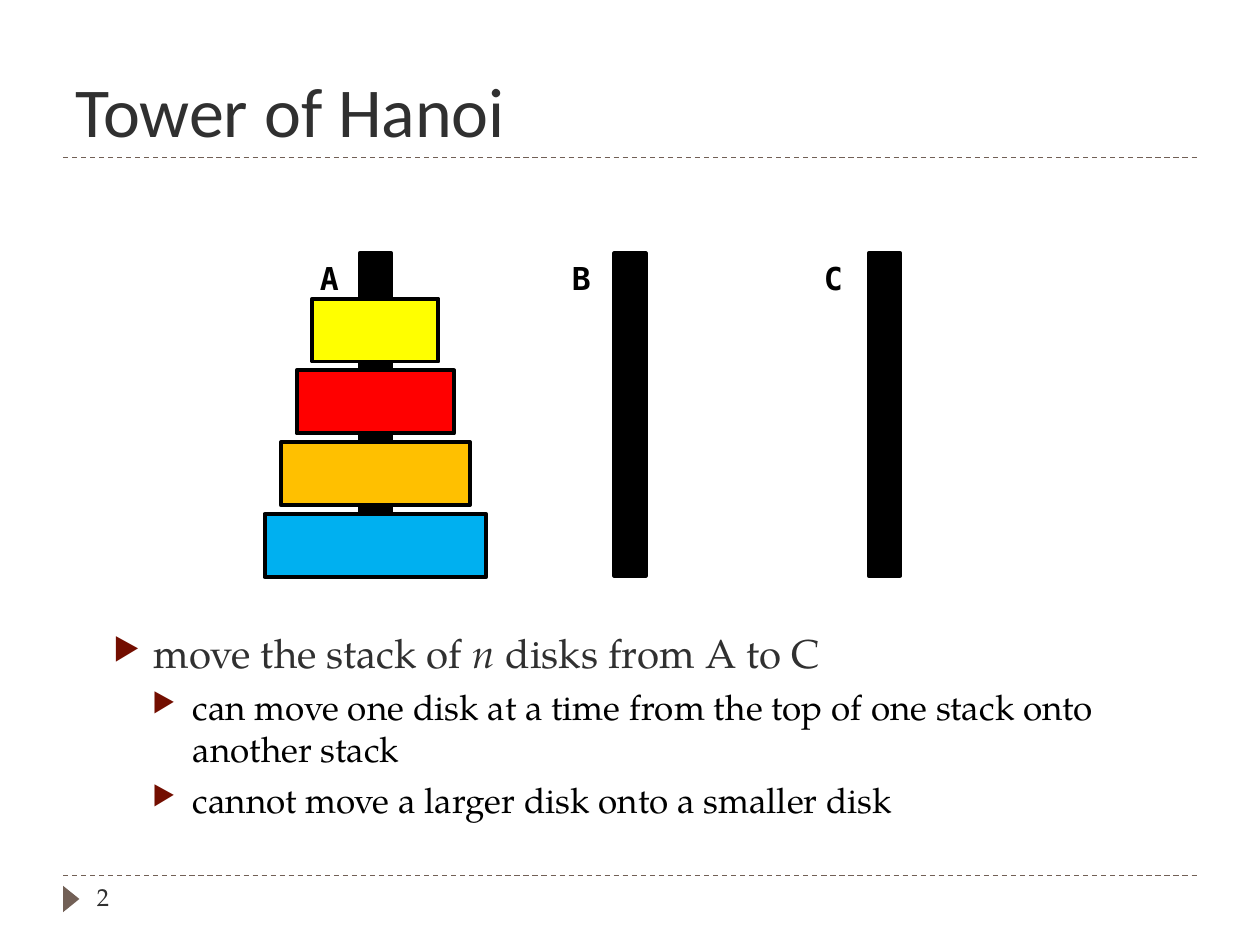
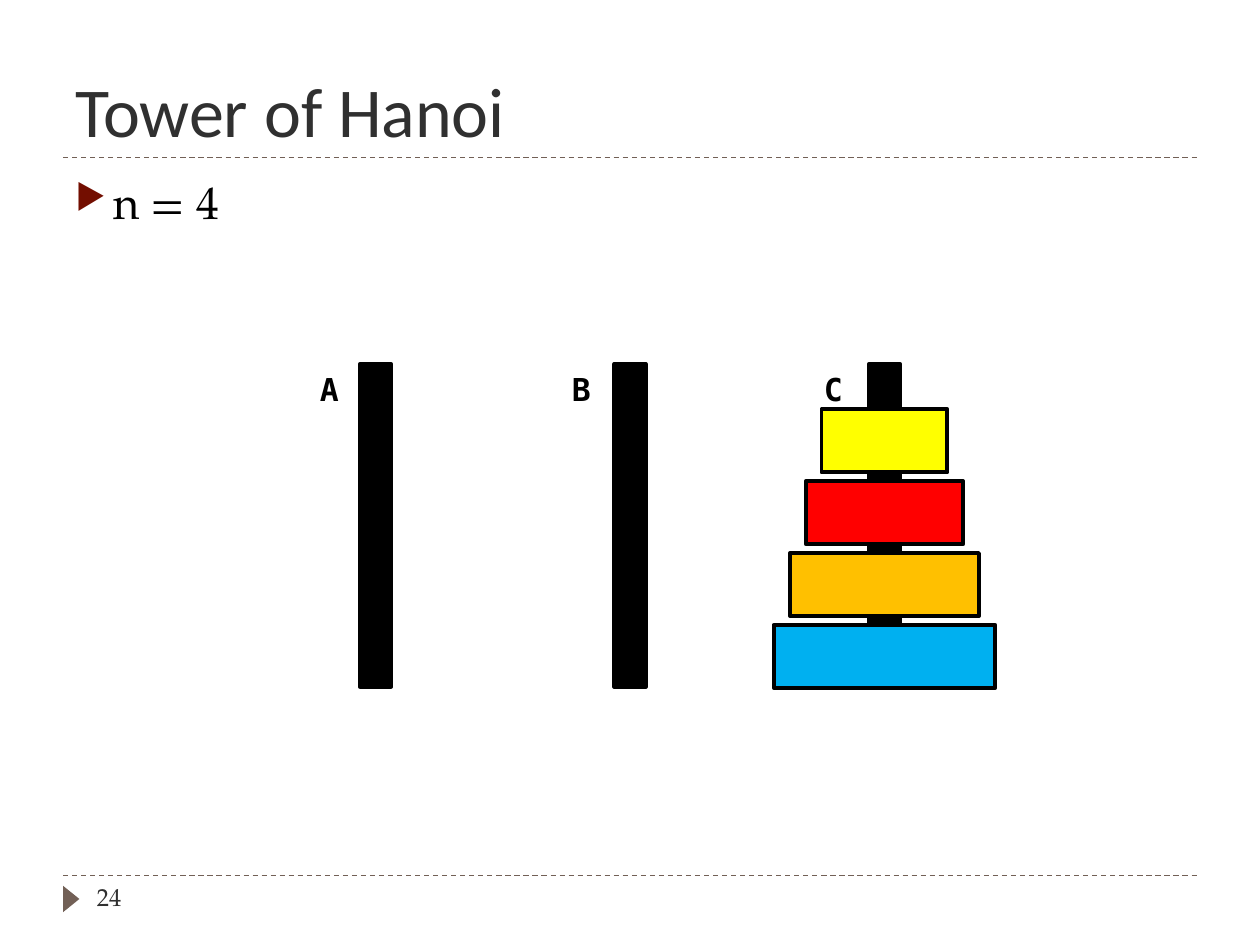
from lxml import etree
from pptx import Presentation
from pptx import util as u
from pptx.dml.color import RGBColor
from pptx.enum import dml, shapes, text
from pptx.oxml import ns

INK = RGBColor(0x30, 0x30, 0x30)
BLACK = RGBColor(0, 0, 0)
TAUPE = RGBColor(0x72, 0x60, 0x56)
MAROON = RGBColor(0x73, 0x0E, 0x00)
YELLOW = RGBColor(0xFF, 0xFF, 0x00)
RED = RGBColor(0xFF, 0, 0)
ORANGE = RGBColor(0xFF, 0xC0, 0)
BLUE = RGBColor(0, 0xB0, 0xF0)

TITLE_FONT = "Calibri"
BODY_FONT = "TeX Gyre Pagella"
LABEL_FONT = "DejaVu Sans Mono"

PEGS = "ABC"
PEG_PITCH = 2.02
PEG_WIDTH, PEG_HEIGHT = 0.25, 2.56
LABEL_LEFT, LABEL_PITCH = 2.44, 2
DISKS = [(1, YELLOW), (1.25, RED), (1.5, ORANGE), (1.76, BLUE)]
DISK_HEIGHT, DISK_PITCH, DISK_OFFSET = 0.5, 0.57, 0.36


def box(left, top, width, height):
    return [u.Inches(value) for value in (left, top, width, height)]


def format_run(run, font, size, color, bold=False, italic=False):
    run.font.name = font
    run.font.size = u.Pt(size)
    run.font.color.rgb = color
    run.font.bold = bold
    run.font.italic = italic


def add_text(slide, place, content, font, size, color, bold=False):
    shape = slide.shapes.add_textbox(*box(*place))
    frame = shape.text_frame
    frame.word_wrap = True
    frame.text = content
    format_run(frame.paragraphs[0].runs[0], font, size, color, bold)
    return frame


def add_shape(slide, kind, place, fill, outlined=False):
    shape = slide.shapes.add_shape(kind, *box(*place))
    shape.shadow.inherit = False
    shape.fill.solid()
    shape.fill.fore_color.rgb = fill
    if outlined:
        shape.line.color.rgb = BLACK
        shape.line.width = u.Pt(2.25)
    else:
        shape.line.fill.background()
    return shape


def add_rule(slide, y):
    rule = slide.shapes.add_connector(
        shapes.MSO_CONNECTOR.STRAIGHT,
        u.Inches(0.5), u.Inches(y), u.Inches(9.5), u.Inches(y))
    rule.line.color.rgb = TAUPE
    rule.line.width = u.Pt(0.75)
    rule.line.dash_style = dml.MSO_LINE.DASH
    etree.SubElement(rule._element.spPr, ns.qn("a:effectLst"))


def set_bullet(paragraph, margin, hanging):
    properties = paragraph._p.get_or_add_pPr()
    properties.set("marL", str(u.Inches(margin)))
    properties.set("indent", str(-u.Inches(hanging)))
    color = etree.SubElement(properties, ns.qn("a:buClr"))
    etree.SubElement(color, ns.qn("a:srgbClr"), val=str(MAROON))
    etree.SubElement(properties, ns.qn("a:buSzPct"), val="76000")
    etree.SubElement(properties, ns.qn("a:buChar"), char="▶")


def add_bullets(slide, top, height, bullets):
    frame = slide.shapes.add_textbox(*box(0.5, top, 9, height)).text_frame
    frame.word_wrap = True
    for index, (parts, size, color, margin, hanging, space) in enumerate(bullets):
        paragraph = frame.paragraphs[0] if index == 0 else frame.add_paragraph()
        paragraph.space_before = u.Pt(space)
        set_bullet(paragraph, margin, hanging)
        for content, italic in parts:
            run = paragraph.add_run()
            run.text = content
            format_run(run, BODY_FONT, size, color, italic=italic)


def add_pegs(slide, top, stacked_peg):
    rectangle = shapes.MSO_SHAPE.RECTANGLE
    centers = {peg: 5 + PEG_PITCH * (index - 1) for index, peg in enumerate(PEGS)}
    for center in centers.values():
        place = (center - PEG_WIDTH / 2, top, PEG_WIDTH, PEG_HEIGHT)
        add_shape(slide, rectangle, place, BLACK, outlined=True)
    for index, (width, color) in enumerate(DISKS):
        place = (centers[stacked_peg] - width / 2,
                 top + DISK_OFFSET + index * DISK_PITCH, width, DISK_HEIGHT)
        add_shape(slide, rectangle, place, color, outlined=True)
    for index, peg in enumerate(PEGS):
        place = (LABEL_LEFT + index * LABEL_PITCH, top, 0.35, 0.4)
        frame = add_text(slide, place, peg, LABEL_FONT, 18, BLACK, bold=True)
        frame.word_wrap = False
        frame.auto_size = text.MSO_AUTO_SIZE.SHAPE_TO_FIT_TEXT


def add_slide(presentation, number):
    slide = presentation.slides.add_slide(presentation.slide_layouts[6])
    for y in (6.95, 1.25):
        add_rule(slide, y)
    marker = add_shape(slide, shapes.MSO_SHAPE.ISOSCELES_TRIANGLE,
                       (0.46, 7.07, 0.21, 0.13), TAUPE)
    marker.rotation = 90
    title = add_text(slide, (0.5, 0.17, 9, 1.08), "Tower of Hanoi",
                     TITLE_FONT, 40, INK)
    title.vertical_anchor = text.MSO_ANCHOR.BOTTOM
    add_text(slide, (0.67, 6.95, 2.17, 0.4), str(number), BODY_FONT, 14, INK)
    return slide


def add_rules_slide(presentation):
    slide = add_slide(presentation, 2)
    goal = [("move the stack of ", False), ("n", True),
            (" disks from A to C", False)]
    limits = ["can move one disk at a time from the top of one stack onto another stack",
              "cannot move a larger disk onto a smaller disk"]
    bullets = [(goal, 23, INK, 0.62, 0.32, 5)]
    bullets += [([(limit, False)], 20, BLACK, 0.93, 0.32, 5) for limit in limits]
    add_bullets(slide, 4.94, 1.79, bullets)
    add_pegs(slide, 2.01, "A")


def add_solved_slide(presentation):
    slide = add_slide(presentation, 24)
    add_bullets(slide, 1.33, 5.4, [([("n = 4", False)], 26, BLACK, 0.3, 0.3, 6)])
    add_pegs(slide, 2.89, "C")


def main():
    presentation = Presentation()
    presentation.slide_width = u.Inches(10)
    presentation.slide_height = u.Inches(7.5)
    add_rules_slide(presentation)
    add_solved_slide(presentation)
    presentation.save("out.pptx")


if __name__ == "__main__":
    main()
